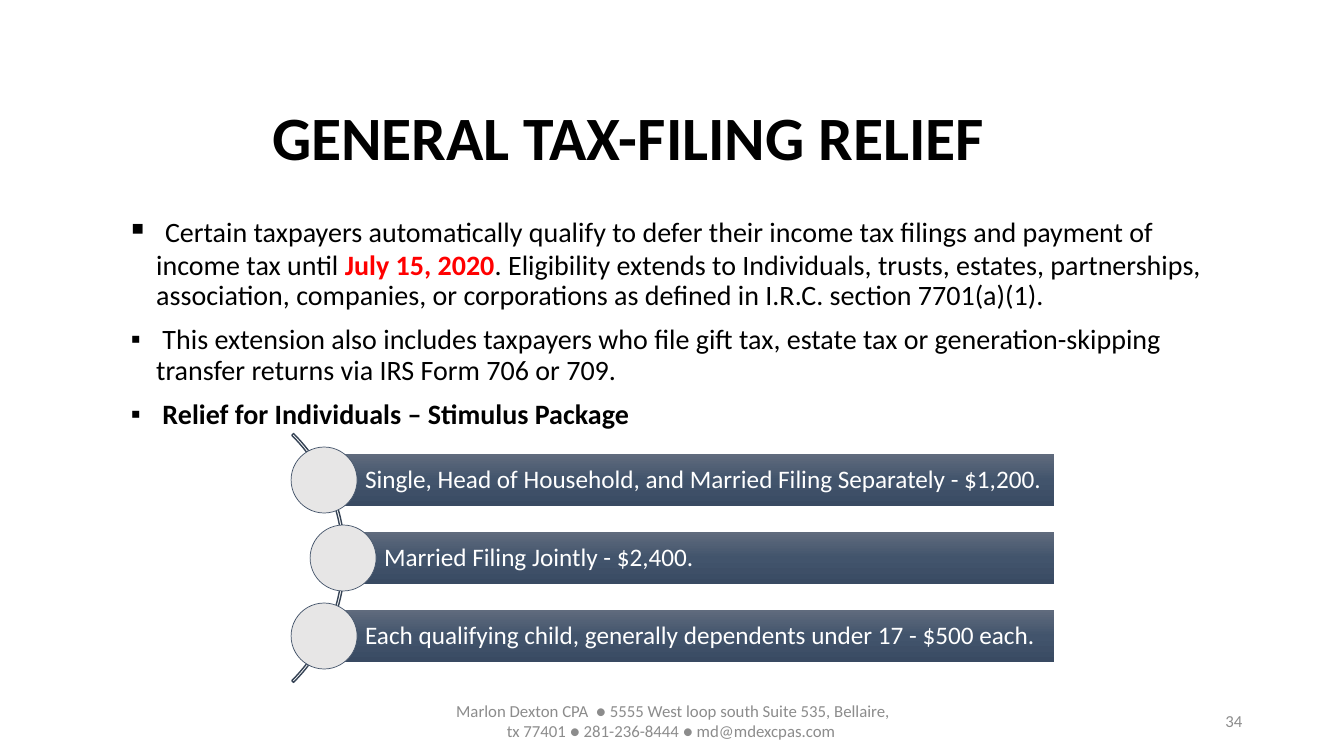
from lxml.etree import SubElement
from pptx import Presentation
from pptx.dml.color import RGBColor
from pptx.enum.shapes import MSO_SHAPE
from pptx.enum.text import MSO_ANCHOR, MSO_AUTO_SIZE, PP_ALIGN
from pptx.oxml.ns import qn
from pptx.util import Emu, Inches, Pt

SCALE = 914400 / 100.8  # EMU in one px
HUES = {
    "ink": "000000", "alert": "FF0000", "mute": "8C8C8C", "white": "FFFFFF",
    "arc": "364355", "dot": "E7E6E6", "rim": "44546A",
    "top": "606B7D", "mid": "42546C", "low": "394A62",
}


def px(num):
    return Emu(round(num * SCALE))


def hue(name):
    return RGBColor.from_string(HUES[name])


class Deck:
    font = "Calibri"

    def __init__(self, wide, high):
        self.file = Presentation()
        self.file.slide_width, self.file.slide_height = Inches(wide), Inches(high)
        self.slide = self.file.slides.add_slide(self.file.slide_layouts[5])

    def run(self, para, text, size, color="ink", bold=False):
        run = para.add_run()
        run.text = text
        font = run.font
        font.name, font.size, font.bold = self.font, Pt(size), bold
        font.color.rgb = hue(color)

    def frame(self, shape, anchor=MSO_ANCHOR.MIDDLE):
        frame = shape.text_frame
        frame.word_wrap = True
        frame.auto_size = MSO_AUTO_SIZE.NONE
        frame.vertical_anchor = anchor
        return frame

    def title(self, text, *box):
        shape = self.slide.shapes.title
        shape.left, shape.top, shape.width, shape.height = map(px, box)
        para = self.frame(shape).paragraphs[0]
        para.alignment, para.line_spacing = PP_ALIGN.LEFT, 0.9
        self.run(para, text, 44, bold=True)

    def list(self, items, *box):
        shape = self.slide.shapes.add_textbox(*map(px, box))
        frame = self.frame(shape, MSO_ANCHOR.TOP)
        for num, runs in enumerate(items):
            para = frame.add_paragraph() if num else frame.paragraphs[0]
            para.line_spacing, para.space_before = 0.9, Pt(10)
            props = para._p.get_or_add_pPr()
            props.set("marL", str(Inches(0.25)))
            props.set("indent", str(-Inches(0.25)))
            SubElement(props, qn("a:buFont"), typeface="Arial")
            SubElement(props, qn("a:buChar"), char="▪")
            for args in runs:
                self.run(para, *args)

    def note(self, text, align, *box):
        shape = self.slide.shapes.add_textbox(*map(px, box))
        para = self.frame(shape).paragraphs[0]
        para.alignment = align
        self.run(para, text, 12, "mute")

    def shape(self, kind, *box):
        shape = self.slide.shapes.add_shape(kind, *map(px, box))
        shape.shadow.inherit = False
        return shape

    def line(self, shape, color, width):
        shape.line.color.rgb = hue(color)
        shape.line.width = Pt(width)

    def arc(self, *box):
        shape = self.shape(MSO_SHAPE.BLOCK_ARC, *box)
        for num, value in enumerate((189, 27, 0.007)):
            shape.adjustments[num] = value
        shape.fill.background()
        self.line(shape, "arc", 1)

    def bar(self, text, *box):
        shape = self.shape(MSO_SHAPE.RECTANGLE, *box)
        shape.fill.gradient()
        shape.fill.gradient_angle = 270
        stops = shape._element.spPr.find(".//" + qn("a:gsLst"))
        for stop in list(stops):
            stops.remove(stop)
        for pos, name in ((0, "top"), (50, "mid"), (100, "low")):
            stop = SubElement(stops, qn("a:gs"), pos=str(pos * 1000))
            SubElement(stop, qn("a:srgbClr"), val=HUES[name])
        shape.line.fill.background()
        frame = self.frame(shape)
        frame.margin_left = px(41)
        frame.margin_right = frame.margin_top = frame.margin_bottom = px(5)
        para = frame.paragraphs[0]
        para.alignment, para.line_spacing = PP_ALIGN.LEFT, 0.9
        self.run(para, text, 18, "white")

    def dot(self, *box):
        shape = self.shape(MSO_SHAPE.OVAL, *box)
        shape.fill.solid()
        shape.fill.fore_color.rgb = hue("dot")
        self.line(shape, "rim", 0.5)


def main():
    deck = Deck(13.33, 7.5)

    # Title and bullets
    deck.title("GENERAL TAX-FILING RELIEF", 262, 68, 1159, 146)
    deck.list([
        [(" ", 28),
         ("Certain taxpayers automatically qualify to defer their income tax "
          "filings and payment of income tax until ", 20),
         ("July 15, 2020", 20, "alert", True),
         (". Eligibility extends to Individuals, trusts, estates, partnerships, "
          "association, companies, or corporations as defined in I.R.C. "
          "section 7701(a)(1).", 20)],
        [(" This extension also includes taxpayers who file gift tax, estate tax "
          "or generation-skipping transfer returns via IRS Form 706 or 709.", 20)],
        [(" Relief for Individuals – Stimulus Package", 20, "ink", True)],
    ], 121, 204, 1109, 496)

    # Footer and page number
    deck.note("Marlon Dexton CPA  ● 5555 West loop south Suite 535, Bellaire, "
              "tx 77401 ● 281-236-8444 ● md@mdexcpas.com ",
              PP_ALIGN.CENTER, 446, 701, 454, 40)
    deck.note("34", PP_ALIGN.RIGHT, 950, 701, 302, 40)

    # Stimulus amounts along the arc
    deck.arc(-7, 382, 352, 352)
    size, right = 66, 1054
    rows = [
        (291, "Single, Head of Household, and Married Filing Separately - $1,200."),
        (310, "Married Filing Jointly - $2,400."),
        (291, "Each qualifying child, generally dependents under 17 - $500 each."),
    ]
    for num, (left, text) in enumerate(rows):
        top = 447 + 78 * num
        mid = left + size // 2
        deck.bar(text, mid, top + 7, right - mid, 52)
        deck.dot(left, top, size, size)

    deck.file.save("out.pptx")


if __name__ == "__main__":
    main()
